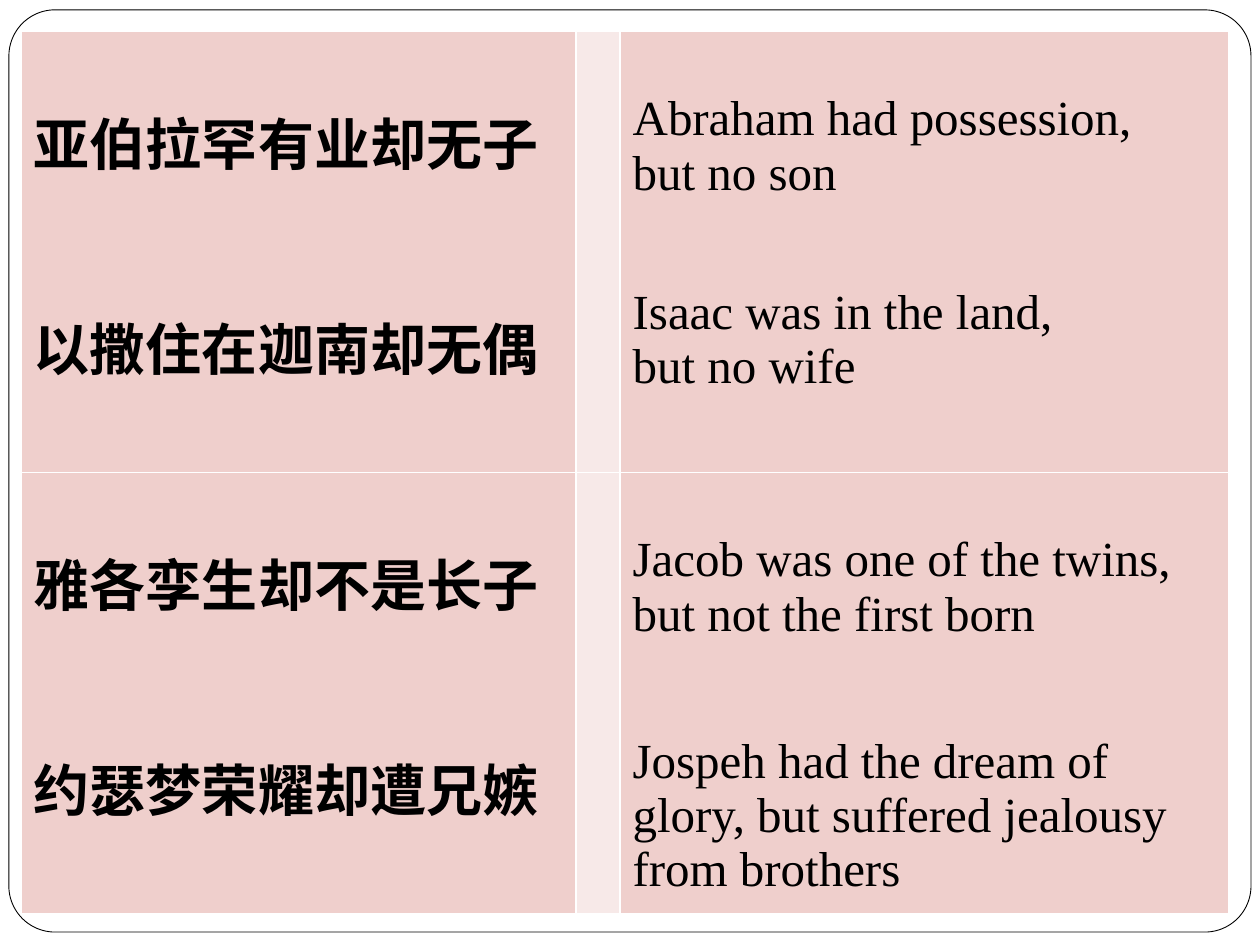
from lxml.etree import SubElement
from pptx import Presentation
from pptx.dml.color import RGBColor
from pptx.enum.shapes import MSO_SHAPE as Shape
from pptx.oxml.ns import qn
from pptx.util import Cm, Pt

FONT = "Times New Roman"
BLACK, WHITE, ROSE, PALE_ROSE = "000000", "FFFFFF", "EFCFCC", "F7E9E8"
COLUMN_WIDTHS = (11.18, 0.89, 12.27)
ROW_HEIGHT = 8.89
CHINESE = {"size": 32, "bold": True, "top": 1.38}
ENGLISH = {"size": 28, "bold": False, "top": 1.22}

ROWS = [
    (
        [("亚伯拉罕有业却无子", 0), ("以撒住在迦南却无偶", 71)],
        [
            ("Abraham had possession,", 0),
            ("but no son", 0),
            ("Isaac was in the land,", 48.7),
            ("but no wife", 0),
        ],
    ),
    (
        [("雅各孪生却不是长子", 0), ("约瑟梦荣耀却遭兄嫉", 71)],
        [
            ("Jacob was one of the twins,", 0),
            ("but not the first born", 0),
            ("Jospeh had the dream of glory, but suffered jealousy from brothers", 53.1),
        ],
    ),
]


def paint(color_format, color):
    color_format.rgb = RGBColor.from_string(color)


def fill_solid(fill, color):
    fill.solid()
    paint(fill.fore_color, color)


def add_frame(slide):
    frame = slide.shapes.add_shape(
        Shape.ROUNDED_RECTANGLE, Cm(0.18), Cm(0.2), Cm(25.04), Cm(18.59)
    )
    frame.adjustments[0] = 0.05
    frame.shadow.inherit = False
    fill_solid(frame.fill, WHITE)
    paint(frame.line.color, BLACK)
    frame.line.width = Pt(0.5)


def style_cell(cell, color):
    properties = cell._tc.get_or_add_tcPr()
    for side in ("a:lnL", "a:lnR", "a:lnT", "a:lnB"):
        border = SubElement(properties, qn(side), w=str(Pt(1)))
        border_fill = SubElement(border, qn("a:solidFill"))
        SubElement(border_fill, qn("a:srgbClr"), val=WHITE)
    fill_solid(cell.fill, color)


def write_cell(cell, lines, size, bold, top):
    cell.margin_top = Cm(top)
    text_frame = cell.text_frame
    text_frame.text = "\n".join(text for text, _ in lines)
    for paragraph, (_, gap) in zip(text_frame.paragraphs, lines):
        paragraph.space_before = Pt(gap)
        paragraph.font.name = FONT
        paragraph.font.size = Pt(size)
        paragraph.font.bold = bold
        paint(paragraph.font.color, BLACK)


def add_verse_table(slide):
    graphic_frame = slide.shapes.add_table(
        len(ROWS), len(COLUMN_WIDTHS), Cm(0.43), Cm(0.64),
        Cm(sum(COLUMN_WIDTHS)), Cm(ROW_HEIGHT * len(ROWS)),
    )
    table = graphic_frame.table
    table.first_row = table.horz_banding = False
    for column, width in zip(table.columns, COLUMN_WIDTHS):
        column.width = Cm(width)
    for index, (chinese, english) in enumerate(ROWS):
        left, gutter, right = table.rows[index].cells
        for cell, color in ((left, ROSE), (gutter, PALE_ROSE), (right, ROSE)):
            style_cell(cell, color)
        write_cell(left, chinese, **CHINESE)
        write_cell(right, english, **ENGLISH)
    graphic_frame.height = Cm(18.62)


def main():
    presentation = Presentation()
    presentation.slide_width, presentation.slide_height = Cm(25.4), Cm(19.05)
    slide = presentation.slides.add_slide(presentation.slide_layouts[6])
    add_frame(slide)
    add_verse_table(slide)
    presentation.save("out.pptx")


if __name__ == "__main__":
    main()
